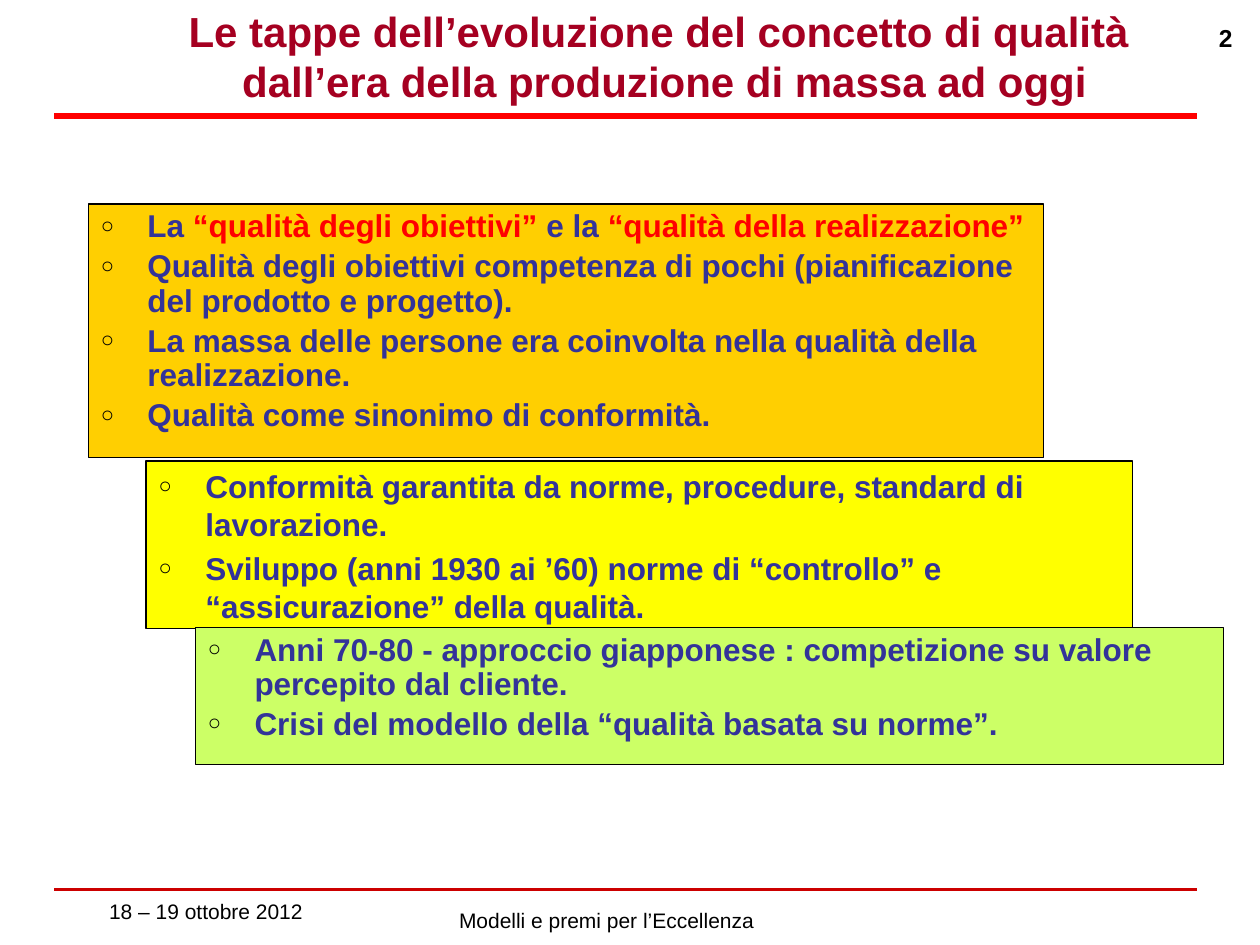
from lxml import etree
from pptx import Presentation
from pptx.dml.color import RGBColor
from pptx.enum import shapes, text
from pptx.oxml.ns import qn
from pptx.util import Inches, Pt

COLORS = {
    "title": "A50021", "text": "333399", "accent": "FF0000", "black": "000000",
    "white": "FFFFFF", "footer_rule": "CC0000",
    "orange": "FFCF01", "yellow": "FFFF00", "green": "CCFF66",
}
TITLE = ["Le tappe dell’evoluzione del concetto di qualità ",
         "dall’era della produzione di massa ad oggi"]
# Each stage: placeholder index, left, top, width, height, fill, line spacing, points.
# A point is a list of (text, color) runs.
STAGES = [
    (1, 0.7, 1.62, 7.58, 2.01, "orange", 0.9, [
        [("La ", "text"), ("“qualità degli obiettivi” ", "accent"),
         ("e la ", "text"), ("“qualità della realizzazione”", "accent")],
        [("Qualità degli obiettivi competenza di pochi "
          "(pianificazione del prodotto e progetto).", "text")],
        [("La massa delle persone era coinvolta nella qualità della realizzazione.", "text")],
        [("Qualità come sinonimo di conformità.", "text")],
    ]),
    (2, 1.16, 3.66, 7.83, 1.33, "yellow", 1.0, [
        [("Conformità garantita da norme, procedure, standard di lavorazione.", "text")],
        [("Sviluppo (anni 1930 ai ’60) norme di “controllo” e "
          "“assicurazione” della qualità.", "text")],
    ]),
    (3, 1.55, 4.98, 8.16, 1.09, "green", 0.9, [
        [("Anni 70-80 - approccio giapponese : competizione su valore "
          "percepito dal cliente.", "text")],
        [("Crisi del modello della “qualità basata su norme”.", "text")],
    ]),
]


class StageSlide:
    font = "Arial"
    indent = 0.37

    def __init__(self, slide):
        self.slide = slide
        self.placeholders = {p.placeholder_format.idx: p for p in slide.placeholders}

    def color(self, name):
        return RGBColor.from_string(COLORS[name])

    def style(self, run, size, color, bold=False):
        run.font.name = self.font
        run.font.size = Pt(size)
        run.font.bold = bold
        run.font.color.rgb = self.color(color)

    def place(self, shape, left, top, width, height):
        shape.left, shape.top = Inches(left), Inches(top)
        shape.width, shape.height = Inches(width), Inches(height)

    def prepare_frame(self, shape, anchor):
        frame = shape.text_frame
        frame.word_wrap = True
        frame.auto_size = text.MSO_AUTO_SIZE.NONE
        frame.vertical_anchor = anchor
        frame.margin_left = frame.margin_right = Inches(0.1)
        frame.margin_top = frame.margin_bottom = Inches(0.05)
        return frame

    def rule(self, y, color, width):
        line = self.slide.shapes.add_connector(
            shapes.MSO_CONNECTOR.STRAIGHT, Inches(0.43), Inches(y), Inches(9.5), Inches(y))
        line.line.color.rgb = self.color(color)
        line.line.width = Pt(width)
        etree.SubElement(line._element.spPr, qn("a:effectLst"))

    def label(self, words, box, size, align, anchor, bold=False, fill=None):
        shape = self.slide.shapes.add_textbox(*map(Inches, box))
        if fill:
            shape.fill.solid()
            shape.fill.fore_color.rgb = self.color(fill)
        frame = self.prepare_frame(shape, anchor)
        frame.text = words
        paragraph = frame.paragraphs[0]
        paragraph.alignment = align
        self.style(paragraph.runs[0], size, "black", bold)

    def title(self, lines, box):
        heading = self.slide.shapes.title
        self.place(heading, *box)
        frame = self.prepare_frame(heading, text.MSO_ANCHOR.TOP)
        frame.text = "\n".join(lines)
        for paragraph in frame.paragraphs:
            paragraph.alignment = text.PP_ALIGN.CENTER
            self.style(paragraph.runs[0], 24, "title", True)

    def bullet(self, paragraph):
        props = paragraph._p.get_or_add_pPr()
        props.set("marL", str(Inches(self.indent)))
        props.set("indent", str(-Inches(self.indent)))
        bullet_color = etree.SubElement(props, qn("a:buClr"))
        etree.SubElement(bullet_color, qn("a:srgbClr"), val=COLORS["black"])
        etree.SubElement(props, qn("a:buSzPct"), val="70000")
        etree.SubElement(props, qn("a:buFont"), typeface=self.font)
        etree.SubElement(props, qn("a:buChar"), char="○")

    def stage(self, index, left, top, width, height, fill, spacing, points):
        body = self.placeholders[index]
        self.place(body, left, top, width, height)
        body.fill.solid()
        body.fill.fore_color.rgb = self.color(fill)
        body.line.color.rgb = self.color("black")
        body.line.width = Pt(0.75)
        frame = self.prepare_frame(body, text.MSO_ANCHOR.TOP)
        for number, point in enumerate(points):
            paragraph = frame.add_paragraph() if number else frame.paragraphs[0]
            paragraph.line_spacing = spacing
            paragraph.space_before = Pt(3.6 if number else 0)
            paragraph.space_after = Pt(0)
            self.bullet(paragraph)
            for words, color in point:
                run = paragraph.add_run()
                run.text = words
                self.style(run, 18, color, True)

    def remove_empty_placeholders(self):
        for placeholder in self.placeholders.values():
            if not placeholder.text_frame.text:
                placeholder._element.getparent().remove(placeholder._element)


def main():
    deck = Presentation()
    deck.slide_width, deck.slide_height = Inches(10), Inches(7.5)
    comparison_layout = deck.slide_layouts[4]
    page = StageSlide(deck.slides.add_slide(comparison_layout))
    align, anchor = text.PP_ALIGN, text.MSO_ANCHOR

    page.rule(0.92, "accent", 3.5)
    page.rule(7.06, "footer_rule", 1.5)
    page.label("18 – 19 ottobre 2012", (0.35, 7.08, 2.57, 0.3), 12,
               align.CENTER, anchor.MIDDLE, fill="white")
    page.label("2", (9.33, 0.13, 0.55, 0.5), 14, align.RIGHT, anchor.TOP, bold=True)
    page.label("Modelli e premi per l’Eccellenza", (3.53, 7.15, 2.57, 0.3), 12,
               align.CENTER, anchor.MIDDLE, fill="white")
    page.title(TITLE, (0.51, -0.01, 9.53, 0.92))
    for stage in STAGES:
        page.stage(*stage)
    page.remove_empty_placeholders()
    deck.save("out.pptx")


if __name__ == "__main__":
    main()
